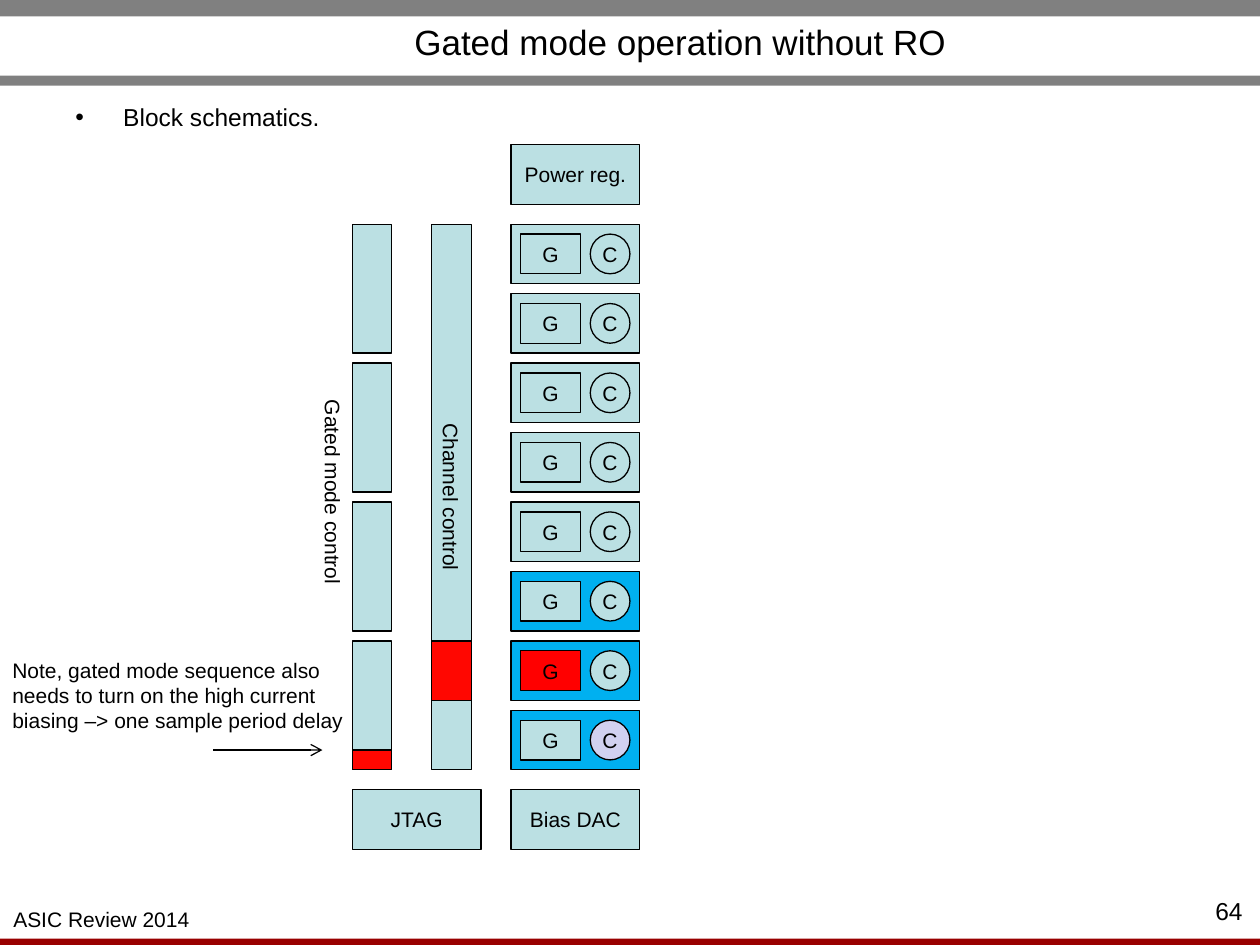
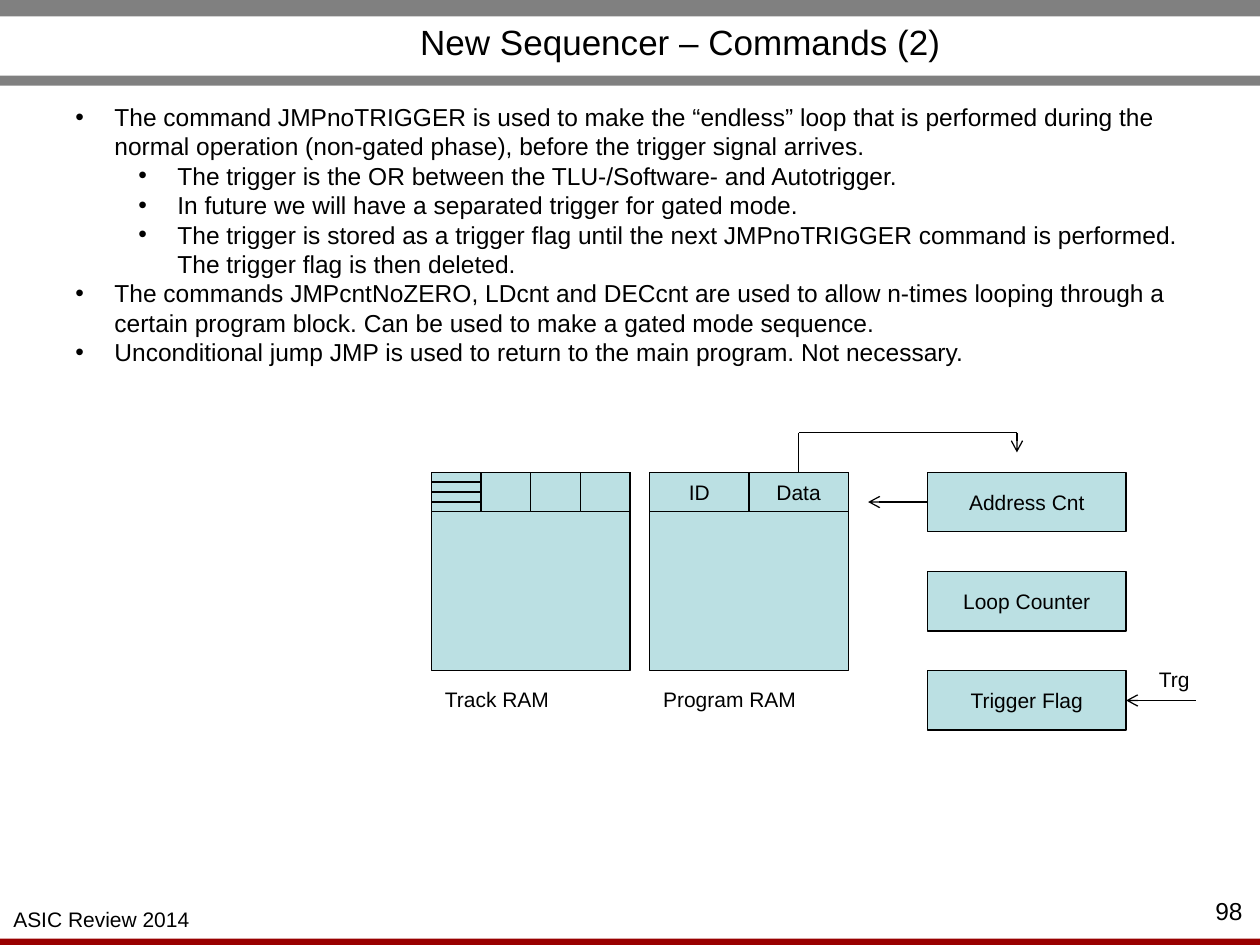
from lxml import etree
from pptx import Presentation
from pptx import util as u
from pptx.dml.color import RGBColor
from pptx.enum import shapes, text
from pptx.oxml import ns

COLOURS = {
    "ink": "000000",
    "band": "808080",
    "footer": "990000",
    "block": "BBE0E3",
    "biased": "00B0F0",
    "gated": "FF0000",
    "active": "FF0701",
    "compare": "D1D1F0",
}
FONT = "Arial"
WIDTH, HEIGHT = u.Inches(10), u.Inches(7.5)

# Diagram grid: 2 mm cells counted from the upper left block
CELL = u.Mm(2)
GRID_LEFT, GRID_TOP = u.Mm(71), u.Mm(45.2)

RECT, OVAL = shapes.MSO_SHAPE.RECTANGLE, shapes.MSO_SHAPE.OVAL
LEFT, CENTRE, RIGHT = text.PP_ALIGN.LEFT, text.PP_ALIGN.CENTER, text.PP_ALIGN.RIGHT
TOP_SIDE, LEFT_SIDE, RIGHT_SIDE = 0, 1, 3


def point(col, row):
    return int(GRID_LEFT + col * CELL), int(GRID_TOP + row * CELL)


def cells(col, row, cols, rows):
    return *point(col, row), int(cols * CELL), int(rows * CELL)


def share(left, top, width, height):
    """Frame given in percent of the slide's size."""
    return tuple(int(part * side / 100) for part, side in
                 zip((left, top, width, height), (WIDTH, HEIGHT) * 2))


def colour(name):
    return RGBColor.from_string(COLOURS[name])


def style(para, size, align):
    para.alignment = align
    para.font.name, para.font.size = FONT, u.Pt(size)
    para.font.color.rgb = colour("ink")


def set_vertical(shape):
    shape.element.txBody.bodyPr.set("vert", "vert")


# Kinds of element

def add_block(page, frame, label="", fill="block", kind=RECT, outlined=True):
    block = page.shapes.add_shape(kind, *frame)
    block.shadow.inherit = False
    block.fill.solid()
    block.fill.fore_color.rgb = colour(fill)
    if outlined:
        block.line.color.rgb = colour("ink")
        block.line.width = u.Pt(0.75)
    else:
        block.line.fill.background()
    if label:
        block.text_frame.text = label
        block.text_frame.word_wrap = False
        block.text_frame.vertical_anchor = text.MSO_ANCHOR.MIDDLE
        style(block.text_frame.paragraphs[0], 12, CENTRE)
    return block


def add_label(page, frame, label, size=12, align=CENTRE, wrap=False, grow=True):
    box = page.shapes.add_textbox(*frame)
    box.text_frame.text = label
    box.text_frame.word_wrap = wrap
    if grow:
        box.text_frame.auto_size = text.MSO_AUTO_SIZE.SHAPE_TO_FIT_TEXT
    style(box.text_frame.paragraphs[0], size, align)
    return box


def add_bullets(page, items, hang):
    """Items are (level, wording); each level moves in by half an inch."""
    box = page.shapes.add_textbox(*share(5, 10.13, 90, 9.73))
    box.text_frame.word_wrap = True
    for number, (level, wording) in enumerate(items):
        para = box.text_frame.add_paragraph() if number else box.text_frame.paragraphs[0]
        para.text, para.level = wording, level
        props = para._p.get_or_add_pPr()
        props.set("marL", str(u.Inches(hang + level / 2)))
        props.set("indent", str(-u.Inches(hang)))
        etree.SubElement(props, ns.qn("a:buFont"), typeface=FONT)
        etree.SubElement(props, ns.qn("a:buChar"), char="•")
        style(para, 14, LEFT)


def add_line(page, start, end, arrow=True):
    line = page.shapes.add_connector(
        shapes.MSO_CONNECTOR.STRAIGHT, *point(*start), *point(*end))
    line.line.color.rgb = colour("ink")
    line.line.width = u.Pt(0.75)
    props = line.element.spPr
    if arrow:
        etree.SubElement(props.find(ns.qn("a:ln")), ns.qn("a:tailEnd"), type="arrow")
    etree.SubElement(props, ns.qn("a:effectLst"))
    return line


def add_page(deck, title, number):
    page = deck.slides.add_slide(deck.slide_layouts[5])
    # Bands and footer
    for top, height, fill in ((99.33, 0.67, "footer"), (0, 1.73, "band"), (8, 1.07, "band")):
        add_block(page, share(0, top, 100, height), fill=fill, outlined=False)
    add_label(page, share(0, 95.33, 16.1, 4), "ASIC Review 2014")
    add_label(page, share(94.9, 94.13, 4.7, 3.2), str(number), 14, RIGHT, True, False)
    # Title
    heading = page.shapes.title
    heading.left, heading.top, heading.width, heading.height = share(13, 1.87, 82, 5.07)
    heading.text_frame.text = title
    heading.text_frame.auto_size = text.MSO_AUTO_SIZE.NONE
    heading.text_frame.vertical_anchor = text.MSO_ANCHOR.MIDDLE
    style(heading.text_frame.paragraphs[0], 20, CENTRE)
    return page


# Slide contents

def build_gated_mode(deck):
    page = add_page(deck, "Gated mode operation without RO", 64)
    add_bullets(page, [(0, "Block schematics.")], 0.38)

    # Channels: the last three are biased, one of them is gated
    channels = 8
    for channel in range(channels):
        row = 7 * channel
        biased = channel >= channels - 3
        gated = channel == channels - 2
        last = channel == channels - 1
        add_block(page, cells(16, row, 13, 6), fill="biased" if biased else "block")
        add_block(page, cells(17, row + 1, 6, 4), "G", "gated" if gated else "block")
        add_block(page, cells(24, row + 1, 4, 4), "C", "compare" if last else "block", OVAL)

    # Control columns with their active parts
    set_vertical(add_block(page, cells(8, 0, 4, 55), "Channel control"))
    for section in range(4):
        add_block(page, cells(0, 14 * section, 4, 13))
    set_vertical(add_label(page, cells(-5, 17, 5, 20), "Gated mode control"))
    add_block(page, cells(8, 42, 4, 6), fill="active")
    add_block(page, cells(0, 53, 4, 2), fill="active")

    # Service blocks
    for col, row, label in ((0, 57, "JTAG"), (16, 57, "Bias DAC"), (16, -8, "Power reg.")):
        add_block(page, cells(col, row, 13, 6), label)

    # Note
    add_line(page, (-14, 53), (-3, 53))
    add_label(page, share(0, 68.93, 29.3, 9.47),
              "Note, gated mode sequence also needs to turn on the high current "
              "biasing –> one sample period delay", align=LEFT, wrap=True)


def build_sequencer(deck):
    page = add_page(deck, "New Sequencer – Commands (2)", 98)
    add_bullets(page, [
        (0, "The command JMPnoTRIGGER is used to make the “endless” loop that is performed "
            "during the normal operation (non-gated phase), before the trigger signal arrives."),
        (1, "The trigger is the OR between the TLU-/Software- and Autotrigger."),
        (1, "In future we will have a separated trigger for gated mode."),
        (1, "The trigger is stored as a trigger flag until the next JMPnoTRIGGER command is "
            "performed. The trigger flag is then deleted."),
        (0, "The commands JMPcntNoZERO, LDcnt and DECcnt are used to allow n-times looping "
            "through a certain program block. Can be used to make a gated mode sequence."),
        (0, "Unconditional jump JMP is used to return to the main program. Not necessary."),
    ], 0.31)

    # Track RAM: four words, the first split into four tracks
    track, program, top = 8, 30, 25
    add_block(page, cells(track, top, 20, 20))
    add_block(page, cells(track, top, 20, 4))
    for word in range(4):
        add_block(page, cells(track + 5 * word, top, 5, 4))
    for bit in range(4):
        add_block(page, cells(track, top + bit, 5, 1))
    add_label(page, cells(track, 46, 13.2, 3.8), "Track RAM")

    # Program RAM
    add_block(page, cells(program, top, 20, 20))
    add_label(page, cells(program, 46, 16.1, 3.8), "Program RAM")
    add_block(page, cells(program, top, 10, 4), "ID")
    data = add_block(page, cells(program + 10, top, 10, 4), "Data")

    # Registers
    address, _, flag = [
        add_block(page, cells(58, top + 10 * place, 20, 6), label)
        for place, label in enumerate(("Address Cnt", "Loop Counter", "Trigger Flag"))]

    # Signals
    add_line(page, (58, 28), (52, 28)).begin_connect(address, LEFT_SIDE)
    add_line(page, (45, 25), (45, 21), arrow=False).begin_connect(data, TOP_SIDE)
    add_line(page, (45, 21), (67, 21), arrow=False)
    add_line(page, (67, 21), (67, 23))
    add_line(page, (85, 48), (78, 48)).end_connect(flag, RIGHT_SIDE)
    add_label(page, cells(80, 44, 5.7, 3.8), "Trg")


def main():
    deck = Presentation()
    deck.slide_width, deck.slide_height = WIDTH, HEIGHT
    build_gated_mode(deck)
    build_sequencer(deck)
    deck.save("out.pptx")


if __name__ == "__main__":
    main()
